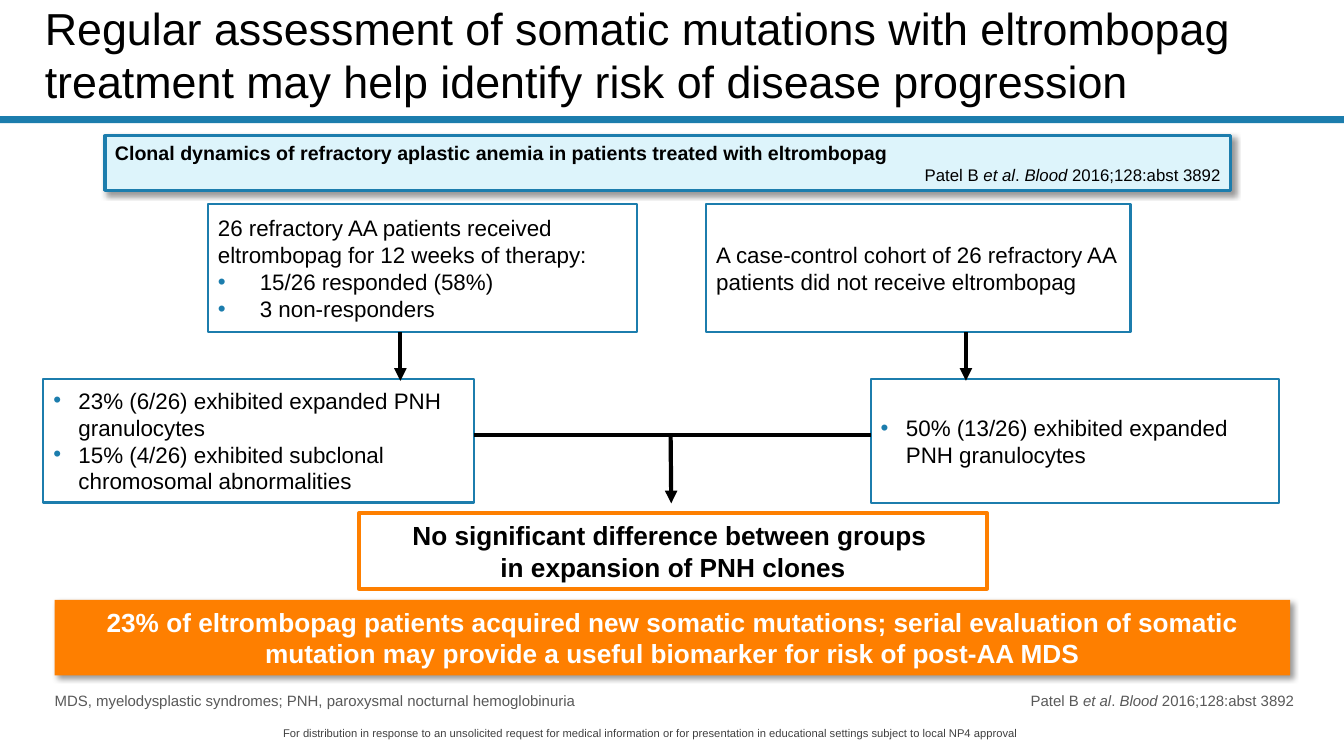
from lxml.etree import SubElement
from pptx import Presentation
from pptx.dml.color import RGBColor
from pptx.enum.shapes import MSO_CONNECTOR, MSO_SHAPE
from pptx.enum.text import MSO_ANCHOR, MSO_AUTO_SIZE, PP_ALIGN
from pptx.oxml.ns import qn
from pptx.util import Pt

BLUE = RGBColor(0x1C, 0x7D, 0xAD)
PALE_BLUE = RGBColor(0xDD, 0xF4, 0xFB)
ORANGE = RGBColor(0xFE, 0x7F, 0x00)
BLACK = RGBColor(0, 0, 0)
WHITE = RGBColor(0xFF, 0xFF, 0xFF)
GREY = RGBColor(0x59, 0x59, 0x59)
DARK_GREY = RGBColor(0x40, 0x40, 0x40)
FONT = "Arial"
LEFT, CENTER, RIGHT = PP_ALIGN.LEFT, PP_ALIGN.CENTER, PP_ALIGN.RIGHT

TITLE = ("Regular assessment of somatic mutations with eltrombopag "
         "treatment may help identify risk of disease progression")
DISCLAIMER = ("For distribution in response to an unsolicited request for medical information "
              "or for presentation in educational settings subject to local NP4 approval")
ABBREVIATIONS = "MDS, myelodysplastic syndromes; PNH, paroxysmal nocturnal hemoglobinuria"
CITATION = [("Patel B ", False), ("et al", True), (". ", False),
            ("Blood ", True), ("2016;128:abst 3892", False)]
STUDY = "Clonal dynamics of refractory aplastic anemia in patients treated with eltrombopag"
CONCLUSION = "No significant difference between groups \nin expansion of PNH clones"
BANNER = ("23% of eltrombopag patients acquired new somatic mutations; serial evaluation "
          "of somatic mutation may provide a useful biomarker for risk of post-AA MDS")

COHORT_BOXES = [
    ((148.5, 145.5, 306.5, 92), 30,
     ["26 refractory AA patients received eltrombopag for 12 weeks of therapy:"],
     ["15/26 responded (58%)", "3 non-responders"]),
    ((504.5, 145.5, 303, 91.5), 0,
     ["A case-control cohort of 26 refractory AA patients did not receive eltrombopag"], []),
    ((31, 270.5, 307.5, 88.5), 18, [],
     ["23% (6/26) exhibited expanded PNH granulocytes",
      "15% (4/26) exhibited subclonal chromosomal abnormalities"]),
    ((622, 270.5, 291.5, 89), 18, [],
     ["50% (13/26) exhibited expanded \nPNH granulocytes"]),
]
LINES = [
    ((338.5, 310.5, 622, 310.5), False),
    ((479, 310.5, 479.5, 359.5), True),
    ((286, 237.5, 286, 272), True),
    ((690, 237.5, 690, 272), True),
]


def add_runs(p, runs, size, color, bold=False, align=LEFT):
    p.alignment = align
    for text, italic in runs:
        for i, part in enumerate(text.split("\n")):
            if i:
                p.add_line_break()
            r = p.add_run()
            r.text = part
            r.font.name, r.font.size = FONT, Pt(size)
            r.font.bold, r.font.italic = bold, italic
            r.font.color.rgb = color


def next_paragraph(tf):
    return tf.paragraphs[0] if not tf.paragraphs[0].runs else tf.add_paragraph()


def set_frame(tf, anchor, insets=(7.2, 3.6), grow=False):
    tf.word_wrap = True
    tf.auto_size = MSO_AUTO_SIZE.SHAPE_TO_FIT_TEXT if grow else MSO_AUTO_SIZE.NONE
    tf.vertical_anchor = anchor
    tf.margin_left = tf.margin_right = Pt(insets[0])
    tf.margin_top = tf.margin_bottom = Pt(insets[1])
    return tf


def add_box(s, at, fill, line=None, width=1.5):
    sp = s.shapes.add_shape(MSO_SHAPE.RECTANGLE, *map(Pt, at))
    sp.shadow.inherit = False
    sp.fill.solid()
    sp.fill.fore_color.rgb = fill
    if line is None:
        sp.line.fill.background()
    else:
        sp.line.color.rgb = line
        sp.line.width = Pt(width)
    return sp


def add_shadow(sp):
    effects = sp._element.spPr.find(qn("a:effectLst"))
    shadow = SubElement(effects, qn("a:outerShdw"), blurRad=str(Pt(4)), dist=str(Pt(3)),
                        dir="2700000", algn="tl", rotWithShape="0")
    color = SubElement(shadow, qn("a:srgbClr"), val=str(BLACK))
    SubElement(color, qn("a:alpha"), val="40000")


def add_bullet(p, indent):
    pPr = p._p.get_or_add_pPr()
    pPr.set("marL", str(Pt(indent)))
    pPr.set("indent", str(-Pt(indent)))
    SubElement(SubElement(pPr, qn("a:buClr")), qn("a:srgbClr"), val=str(BLUE))
    SubElement(pPr, qn("a:buFont"), typeface=FONT)
    SubElement(pPr, qn("a:buChar"), char="•")


def add_line(s, ends, arrow):
    cn = s.shapes.add_connector(MSO_CONNECTOR.STRAIGHT, *map(Pt, ends))
    cn.line.color.rgb = BLACK
    cn.line.width = Pt(3)
    if arrow:
        SubElement(cn.line._get_or_add_ln(), qn("a:tailEnd"), type="triangle")
    SubElement(cn._element.spPr, qn("a:effectLst"))


def add_text(s, at, runs, size, color, align, anchor, **frame):
    tf = set_frame(s.shapes.add_textbox(*map(Pt, at)).text_frame, anchor, **frame)
    add_runs(tf.paragraphs[0], runs, size, color, align=align)
    return tf.paragraphs[0]


def main():
    prs = Presentation()
    prs.slide_width, prs.slide_height = Pt(960), Pt(540)
    s = prs.slides.add_slide(prs.slide_layouts[5])

    title = s.shapes.title
    title.left, title.top, title.width, title.height = map(Pt, (32, 6.5, 900, 70.5))
    tf = set_frame(title.text_frame, MSO_ANCHOR.BOTTOM, (0, 0))
    add_runs(tf.paragraphs[0], [(TITLE, False)], 32, BLACK)

    add_box(s, (0, 83, 960, 5), BLUE)
    add_text(s, (144, 516, 642, 15), [(DISCLAIMER, False)], 8, DARK_GREY, CENTER,
             MSO_ANCHOR.TOP, insets=(5, 3), grow=True)
    for left, runs, align in ((32, [(ABBREVIATIONS, False)], LEFT), (523.5, CITATION, RIGHT)):
        p = add_text(s, (left, 479.5, 408, 31), runs, 10.7, GREY, align, MSO_ANCHOR.BOTTOM)
        p.line_spacing = 0.95
        p.space_after = Pt(10)

    header = add_box(s, (75, 97, 804, 39), PALE_BLUE, BLUE, 2.25)
    add_shadow(header)
    tf = set_frame(header.text_frame, MSO_ANCHOR.TOP, grow=True)
    add_runs(next_paragraph(tf), [(STUDY, False)], 14, BLACK, bold=True)
    add_runs(next_paragraph(tf), CITATION, 12, BLACK, align=RIGHT)

    for at, indent, plain, bulleted in COHORT_BOXES:
        tf = set_frame(add_box(s, at, WHITE, BLUE).text_frame, MSO_ANCHOR.MIDDLE)
        for text in plain:
            add_runs(next_paragraph(tf), [(text, False)], 16, BLACK)
        for text in bulleted:
            p = next_paragraph(tf)
            add_runs(p, [(text, False)], 16, BLACK)
            add_bullet(p, indent)

    conclusion = add_box(s, (256.5, 366.5, 448.5, 54), WHITE, ORANGE, 3)
    tf = set_frame(conclusion.text_frame, MSO_ANCHOR.MIDDLE)
    add_runs(tf.paragraphs[0], [(CONCLUSION, False)], 18.7, BLACK, True, CENTER)

    banner = add_box(s, (39, 428.5, 882.5, 54), ORANGE)
    add_shadow(banner)
    tf = set_frame(banner.text_frame, MSO_ANCHOR.TOP, (8.6, 4.3), grow=True)
    add_runs(tf.paragraphs[0], [(BANNER, False)], 18.7, WHITE, True, CENTER)

    for ends, arrow in LINES:
        add_line(s, ends, arrow)

    prs.save("out.pptx")


if __name__ == "__main__":
    main()
